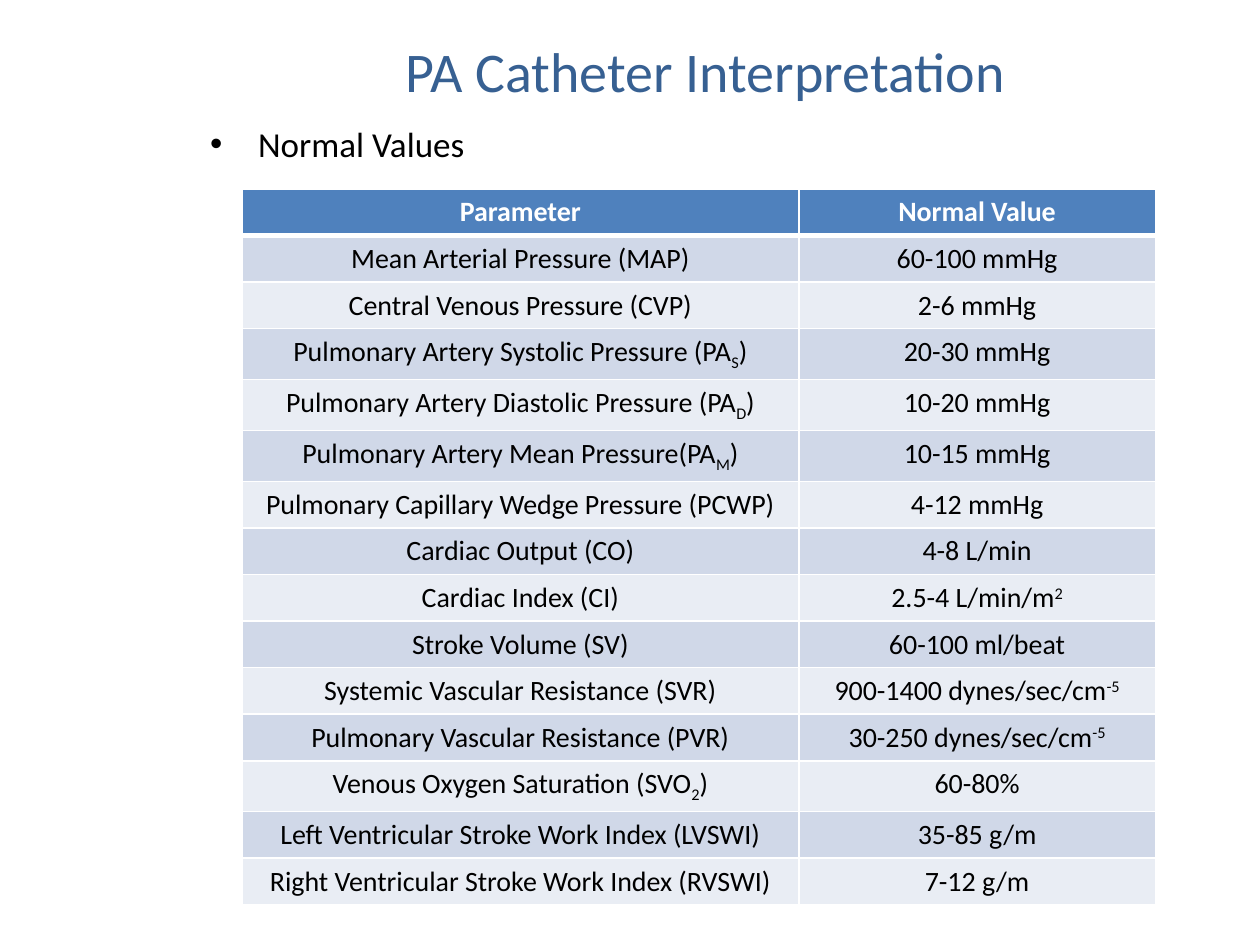
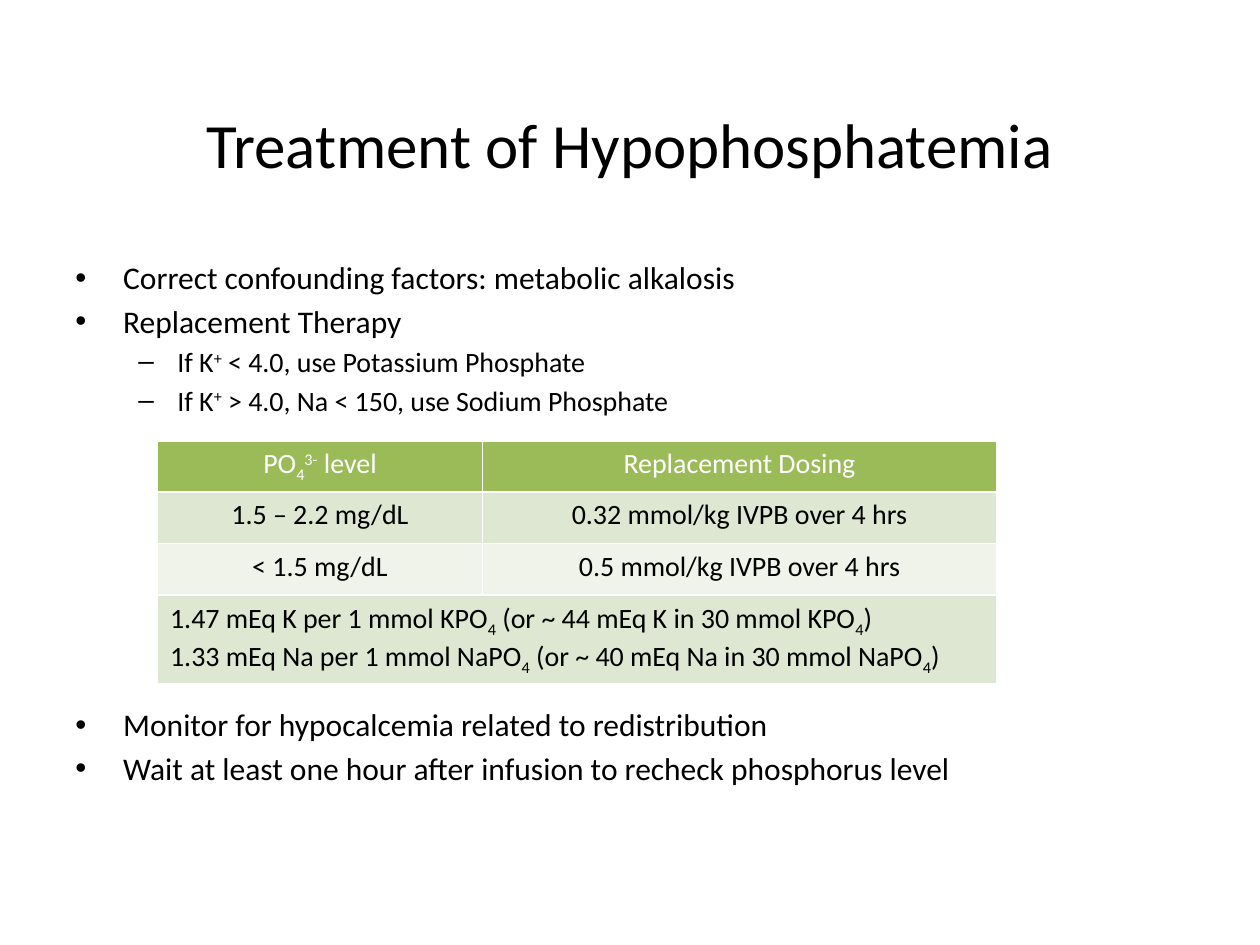
from dataclasses import dataclass

from lxml import etree
from pptx import Presentation
from pptx.dml.color import RGBColor
from pptx.enum.text import MSO_ANCHOR, PP_ALIGN
from pptx.oxml.ns import qn
from pptx.util import Inches, Pt

LEFT, CENTER = PP_ALIGN.LEFT, PP_ALIGN.CENTER
TOP, MIDDLE = MSO_ANCHOR.TOP, MSO_ANCHOR.MIDDLE

FONT, BULLET_FONT = "Calibri", "Arial"
BLACK, WHITE, TITLE_BLUE = "000000", "FFFFFF", "376092"
TABLE_SIZE = 16
SUB, SUPER = -25000, 30000


@dataclass(frozen=True)
class Box:
    left: float
    top: float
    width: float
    height: float

    def emu(self) -> tuple:
        return tuple(Inches(v) for v in (self.left, self.top, self.width, self.height))


@dataclass(frozen=True)
class Bullet:
    text: str
    size: int
    level: int = 0


@dataclass(frozen=True)
class Palette:
    header: str
    odd: str
    even: str


@dataclass(frozen=True)
class Grid:
    left: float
    top: float
    columns: tuple
    row_heights: tuple
    palette: Palette
    header_bold: bool
    header_rule: float  # width in points of the line under the header


BLUE = Palette("4F81BD", "D0D8E8", "E9EDF4")
GREEN = Palette("9BBB59", "DEE7D1", "EFF3EA")

# Bullet character, left margin and hanging indent for each level
LEVELS = (("•", 0.38, 0.38), ("–", 0.81, 0.31))

# In all texts _x_ is a subscript and ^x^ a superscript
NORMAL_VALUES = [
    ("Parameter", "Normal Value"),
    ("Mean Arterial Pressure (MAP)", "60-100 mmHg"),
    ("Central Venous Pressure (CVP)", "2-6 mmHg"),
    ("Pulmonary Artery Systolic Pressure (PA_S_)", "20-30 mmHg"),
    ("Pulmonary Artery Diastolic Pressure (PA_D_)", "10-20 mmHg"),
    ("Pulmonary Artery Mean Pressure(PA_M_)", "10-15 mmHg"),
    ("Pulmonary Capillary Wedge Pressure (PCWP)", "4-12 mmHg"),
    ("Cardiac Output (CO)", "4-8 L/min"),
    ("Cardiac Index (CI)", "2.5-4 L/min/m^2^"),
    ("Stroke Volume (SV)", "60-100 ml/beat"),
    ("Systemic Vascular Resistance (SVR)", "900-1400 dynes/sec/cm^-5^"),
    ("Pulmonary Vascular Resistance (PVR)", "30-250 dynes/sec/cm^-5^"),
    ("Venous Oxygen Saturation (SVO_2_)", "60-80%"),
    ("Left Ventricular Stroke Work Index (LVSWI)", "35-85 g/m"),
    ("Right Ventricular Stroke Work Index (RVSWI)", "7-12 g/m"),
]

# A row with one text spans the whole table
PHOSPHATE_DOSING = [
    ("PO_4_^3-^ level", "Replacement Dosing"),
    ("1.5 – 2.2 mg/dL", "0.32 mmol/kg IVPB over 4 hrs"),
    ("< 1.5 mg/dL", "0.5 mmol/kg IVPB over 4 hrs"),
    ("1.47 mEq K per 1 mmol KPO_4_ (or ~ 44 mEq K in 30 mmol KPO_4_)\n"
     "1.33 mEq Na per 1 mmol NaPO_4_ (or ~ 40 mEq Na in 30 mmol NaPO_4_)",),
]

TREATMENT_STEPS = [
    Bullet("Correct confounding factors: metabolic alkalosis", 18),
    Bullet("Replacement Therapy", 18),
    Bullet("If K^+^ < 4.0, use Potassium Phosphate", 16, 1),
    Bullet("If K^+^ > 4.0, Na < 150, use Sodium Phosphate", 16, 1),
]
FOLLOW_UP = [
    Bullet("Monitor for hypocalcemia related to redistribution", 18),
    Bullet("Wait at least one hour after infusion to recheck phosphorus level", 18),
]


def rgb(value: str) -> RGBColor:
    return RGBColor.from_string(value)


def write(p, text: str, *, size: float, color: str = BLACK, bold: bool = False,
          align=LEFT) -> None:
    """Fill a paragraph, turning the script marks into raised and lowered runs."""
    p.alignment = align
    for i, part in enumerate(text.split("_")):
        for j, piece in enumerate(part.split("^")):
            if not piece:
                continue
            r = p.add_run()
            r.text = piece
            r.font.name, r.font.size, r.font.bold = FONT, Pt(size), bold
            r.font.color.rgb = rgb(color)
            baseline = SUB if i % 2 else SUPER if j % 2 else 0
            if baseline:
                r._r.get_or_add_rPr().set("baseline", str(baseline))


def add_box(s, box: Box, anchor=TOP):
    tf = s.shapes.add_textbox(*box.emu()).text_frame
    tf.word_wrap = True
    tf.vertical_anchor = anchor
    return tf


def add_title(s, text: str, box: Box, size: float, color: str) -> None:
    tf = add_box(s, box, MIDDLE)
    write(tf.paragraphs[0], text, size=size, color=color, align=CENTER)


def add_bullets(s, bullets: list, box: Box) -> None:
    tf = add_box(s, box)
    for i, bullet in enumerate(bullets):
        p = tf.add_paragraph() if i else tf.paragraphs[0]
        char, margin, hang = LEVELS[bullet.level]
        pPr = p._p.get_or_add_pPr()
        pPr.set("marL", str(Inches(margin)))
        pPr.set("indent", str(-Inches(hang)))
        etree.SubElement(pPr, qn("a:buFont")).set("typeface", BULLET_FONT)
        etree.SubElement(pPr, qn("a:buChar")).set("char", char)
        p.level = bullet.level
        if i:
            p.space_before = Pt(round(0.18 * bullet.size, 1))
        write(p, bullet.text, size=bullet.size)


def set_borders(cell, top: float, bottom: float) -> None:
    tcPr = cell._tc.get_or_add_tcPr()
    for side, width in (("L", 1), ("R", 1), ("T", top), ("B", bottom)):
        ln = etree.SubElement(tcPr, qn(f"a:ln{side}"), w=str(Pt(width)))
        fill = etree.SubElement(ln, qn("a:solidFill"))
        etree.SubElement(fill, qn("a:srgbClr"), val=WHITE)


def add_grid(s, rows: list, grid: Grid) -> None:
    box = Box(grid.left, grid.top, sum(grid.columns), sum(grid.row_heights))
    table = s.shapes.add_table(len(rows), len(grid.columns), *box.emu()).table
    for column, width in zip(table.columns, grid.columns):
        column.width = Inches(width)
    for i, (texts, height) in enumerate(zip(rows, grid.row_heights)):
        header = i == 0
        table.rows[i].height = Inches(height)
        color = grid.palette.odd if i % 2 else grid.palette.even
        for cell in table.rows[i].cells:
            set_borders(cell, grid.header_rule if i == 1 else 1,
                        grid.header_rule if header else 1)
            cell.fill.solid()
            cell.fill.fore_color.rgb = rgb(grid.palette.header if header else color)
        spans = len(texts) == 1
        if spans:
            table.cell(i, 0).merge(table.cell(i, len(grid.columns) - 1))
        for j, text in enumerate(texts):
            tf = table.cell(i, j).text_frame
            for k, line in enumerate(text.split("\n")):
                p = tf.add_paragraph() if k else tf.paragraphs[0]
                write(p, line, size=TABLE_SIZE, color=WHITE if header else BLACK,
                      bold=header and grid.header_bold,
                      align=LEFT if spans else CENTER)


def build_normal_values(s) -> None:
    add_title(s, "PA Catheter Interpretation", Box(1.5, 0.17, 8.2, 0.78), 32, TITLE_BLUE)
    add_bullets(s, [Bullet("Normal Values", 20)], Box(1.57, 0.92, 8.2, 0.5))
    heights = tuple(0.4 if "_" in name else 0.37 for name, _ in NORMAL_VALUES)
    add_grid(s, NORMAL_VALUES, Grid(1.92, 1.5, (4.42, 2.83), heights, BLUE, True, 3))


def build_treatment(s) -> None:
    add_title(s, "Treatment of Hypophosphatemia", Box(0.5, 0.77, 9, 0.73), 36, BLACK)
    add_bullets(s, TREATMENT_STEPS, Box(0.5, 2, 9, 1.45))
    add_grid(s, PHOSPHATE_DOSING,
             Grid(1.25, 3.5, (2.58, 4.08), (0.4, 0.41, 0.41, 0.7), GREEN, False, 1))
    add_bullets(s, FOLLOW_UP, Box(0.5, 5.55, 9, 1.2))


def main() -> None:
    prs = Presentation()
    prs.slide_width, prs.slide_height = Inches(10), Inches(7.5)
    blank = prs.slide_layouts[6]
    for build in (build_normal_values, build_treatment):
        build(prs.slides.add_slide(blank))
    prs.save("out.pptx")


if __name__ == "__main__":
    main()
